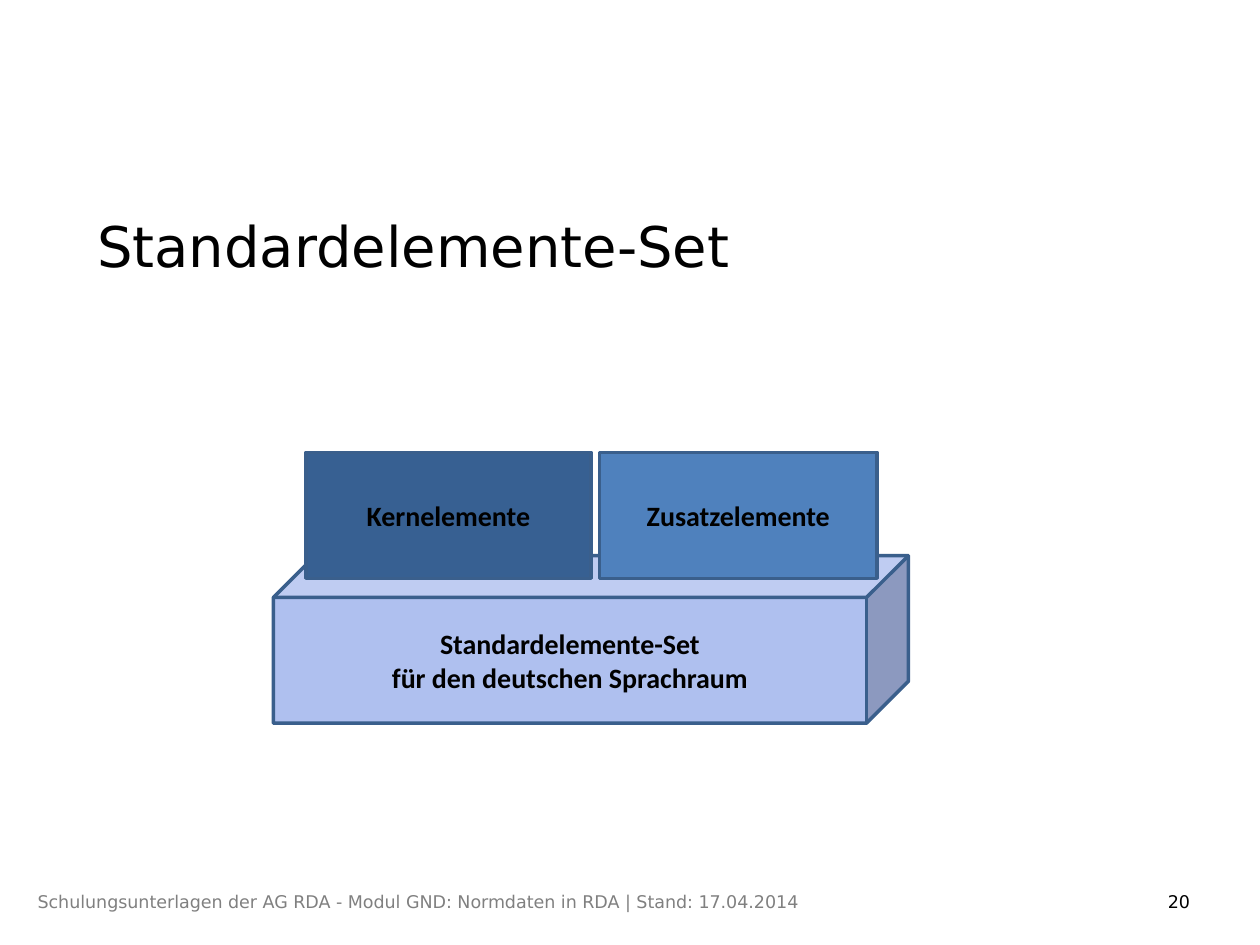
"""Build the slide on the standard element set as two blocks on a base."""
from dataclasses import dataclass

import pptx
import pptx.dml.color
import pptx.enum.shapes
import pptx.enum.text
import pptx.shapes.base
import pptx.slide
import pptx.util

COLUMNS, ROWS = 100, 75
SHAPES = pptx.enum.shapes.MSO_SHAPE
ALIGN = pptx.enum.text.PP_ALIGN
ANCHOR = pptx.enum.text.MSO_ANCHOR


@dataclass(frozen=True)
class Theme:
    sans: str = "DejaVu Sans"
    label: str = "Calibri"
    text: str = "000000"
    muted: str = "808080"
    core: str = "376092"
    extra: str = "4F81BD"
    base: str = "AFC0EF"
    outline: str = "3A5F8C"
    title_size: int = 32
    label_size: int = 16
    footer_size: int = 10
    outline_width: int = 2


@dataclass(frozen=True)
class Area:
    column: float
    row: float
    columns: float
    rows: float


@dataclass(frozen=True)
class Block:
    area: Area
    kind: SHAPES
    fill: str
    lines: tuple[str, ...]


@dataclass(frozen=True)
class FooterItem:
    area: Area
    text: str
    color: str


THEME = Theme()
BLOCK_ROW, BLOCK_ROWS = 35.9, 10
BLOCKS = (
    Block(Area(21.7, 44.1, 50.4, 13.3), SHAPES.CUBE, THEME.base,
          ("Standardelemente-Set", "für den deutschen Sprachraum")),
    Block(Area(47.6, BLOCK_ROW, 22, BLOCK_ROWS), SHAPES.RECTANGLE, THEME.extra,
          ("Zusatzelemente",)),
    Block(Area(24.3, BLOCK_ROW, 22.6, BLOCK_ROWS), SHAPES.RECTANGLE, THEME.core,
          ("Kernelemente",)),
)
FOOTER_ROW, FOOTER_ROWS = 70.2, 2.7
FOOTER = (
    FooterItem(Area(91.7, FOOTER_ROW, 7.9, FOOTER_ROWS), "20", THEME.text),
    FooterItem(Area(2, FOOTER_ROW, 70.1, FOOTER_ROWS),
               "Schulungsunterlagen der AG RDA - Modul GND: Normdaten in RDA"
               " | Stand: 17.04.2014", THEME.muted),
)


def rgb(color: str) -> pptx.dml.color.RGBColor:
    return pptx.dml.color.RGBColor.from_string(color)


def apply(target: object, values: dict) -> None:
    for name, value in values.items():
        setattr(target, name, value)


def place(area: Area) -> dict[str, int]:
    cell_width = pptx.util.Inches(10) / COLUMNS
    cell_height = pptx.util.Inches(7.5) / ROWS
    return {
        "left": round(area.column * cell_width),
        "top": round(area.row * cell_height),
        "width": round(area.columns * cell_width),
        "height": round(area.rows * cell_height),
    }


def write(shape: pptx.shapes.base.BaseShape, lines: tuple[str, ...],
          font: dict, color: str, align: ALIGN, frame: dict) -> None:
    text_frame = shape.text_frame
    apply(text_frame, {"word_wrap": True, **frame})
    for index, line in enumerate(lines):
        para = text_frame.add_paragraph() if index else text_frame.paragraphs[0]
        para.alignment = align
        span = para.add_run()
        span.text = line
        apply(span.font, font)
        span.font.color.rgb = rgb(color)


def draw_title(page: pptx.slide.Slide, area: Area, text: str) -> None:
    title = page.shapes.title
    apply(title, place(area))
    write(title, (text,),
          {"name": THEME.sans, "size": pptx.util.Pt(THEME.title_size)},
          THEME.text, ALIGN.LEFT,
          {"vertical_anchor": ANCHOR.TOP, "margin_top": 0,
           "auto_size": pptx.enum.text.MSO_AUTO_SIZE.NONE})


def draw_block(page: pptx.slide.Slide, block: Block) -> None:
    shape = page.shapes.add_shape(block.kind, **place(block.area))
    shape.shadow.inherit = False
    shape.fill.solid()
    shape.fill.fore_color.rgb = rgb(block.fill)
    shape.line.color.rgb = rgb(THEME.outline)
    shape.line.width = pptx.util.Pt(THEME.outline_width)
    write(shape, block.lines,
          {"name": THEME.label, "size": pptx.util.Pt(THEME.label_size),
           "bold": True},
          THEME.text, ALIGN.CENTER, {"vertical_anchor": ANCHOR.MIDDLE})


def draw_footer(page: pptx.slide.Slide, item: FooterItem) -> None:
    box = page.shapes.add_textbox(**place(item.area))
    write(box, (item.text,),
          {"name": THEME.sans, "size": pptx.util.Pt(THEME.footer_size)},
          item.color, ALIGN.LEFT, {"vertical_anchor": ANCHOR.TOP})


def main() -> None:
    deck = pptx.Presentation()
    apply(deck, {"slide_width": pptx.util.Inches(10),
                 "slide_height": pptx.util.Inches(7.5)})
    page = deck.slides.add_slide(deck.slide_layouts.get_by_name("Title Only"))
    draw_title(page, Area(6.7, 16.8, 64.6, 8.5), "Standardelemente-Set")
    for block in BLOCKS:
        draw_block(page, block)
    for item in FOOTER:
        draw_footer(page, item)
    deck.save("out.pptx")


if __name__ == "__main__":
    main()
